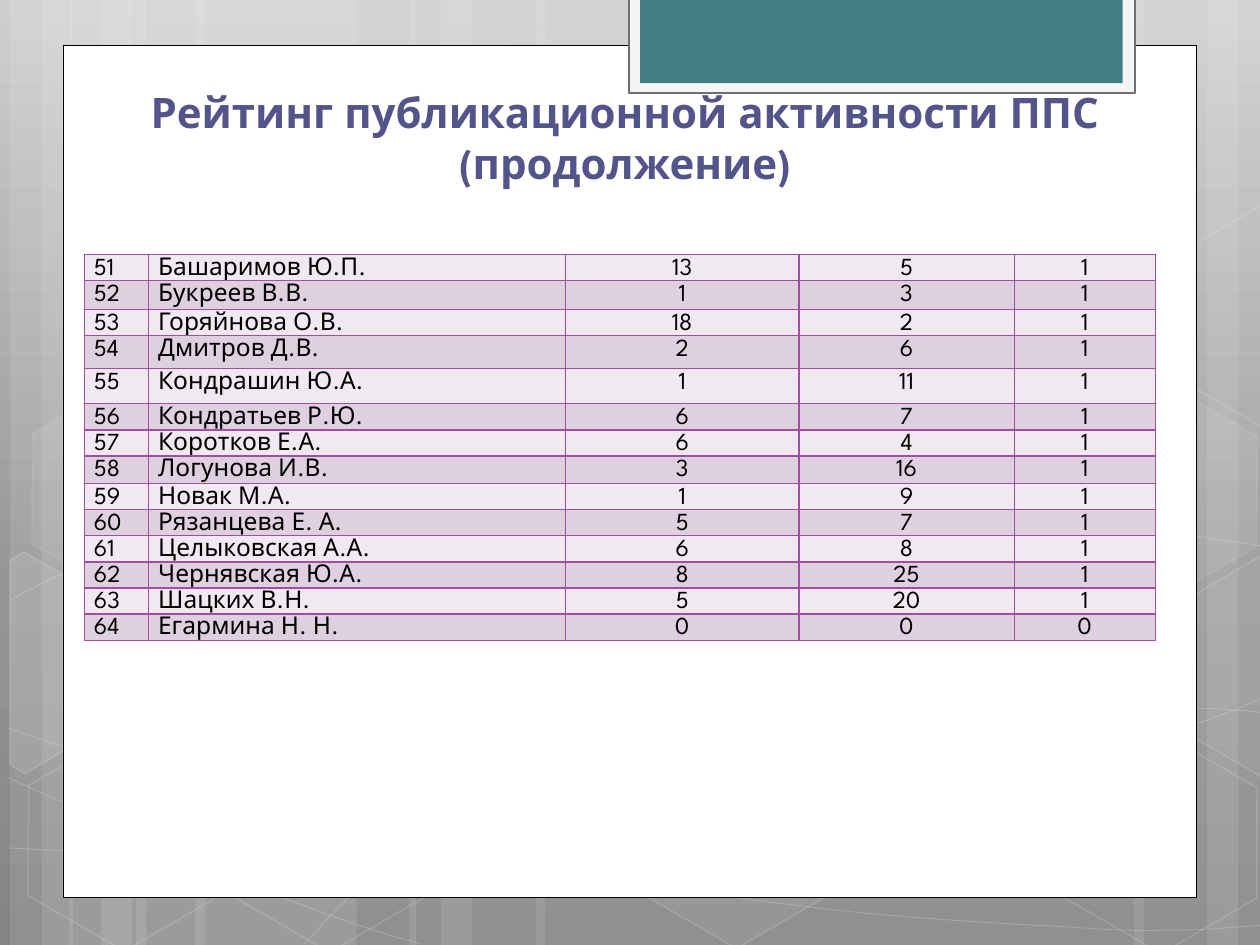
"""Build the staff publication rating slide with its continued table."""
from copy import deepcopy
from dataclasses import dataclass
from typing import Any, Optional

from lxml.etree import SubElement
from pptx import Presentation
from pptx.dml.color import RGBColor
from pptx.enum.shapes import MSO_SHAPE
from pptx.enum.text import MSO_ANCHOR, MSO_AUTO_SIZE, PP_ALIGN
from pptx.oxml.ns import qn
from pptx.util import Inches, Pt

WHITE = RGBColor(0xFF, 0xFF, 0xFF)
BLACK = RGBColor(0x00, 0x00, 0x00)
INDIGO = RGBColor(0x53, 0x54, 0x8A)
TEAL = RGBColor(0x43, 0x80, 0x86)
TAB_GREY = RGBColor(0xF5, 0xF5, 0xF5)
TAB_EDGE = RGBColor(0x6F, 0x6F, 0x6F)
PURPLE = RGBColor(0xA0, 0x4D, 0xA3)
ROW_COLORS = (RGBColor(0xF0, 0xE9, 0xF0), RGBColor(0xDF, 0xD0, 0xE0))
BACKDROP = ((0, RGBColor(0xCF, 0xCF, 0xCF)), (0.62, RGBColor(0x96, 0x96, 0x96)),
            (1, RGBColor(0x84, 0x84, 0x84)))
FONT = "League Spartan"
Point = tuple[float, float]


@dataclass(frozen=True)
class Paint:
    fill: Optional[RGBColor] = None
    fill_alpha: int = 100
    line: Optional[RGBColor] = None
    line_width: float = 1
    line_alpha: int = 100


@dataclass(frozen=True)
class Hexagon:
    left: float
    top: float
    fill_alpha: int
    line_alpha: int


@dataclass(frozen=True)
class Panel:
    left: float
    top: float
    width: float
    height: float
    paint: Paint


@dataclass(frozen=True)
class Rating:
    number: int
    person: str
    scores: tuple[int, int, int]
    height: float


BANDS = ((1.08, 1.75), (0.08, 0.5), (0.33, 0.83), (1.55, 1.75), (0.55, 0.5), (0.8, 0.83),
         (7.33, 1.75), (9.58, 0.5), (9, 0.83), (4.25, 3.08), (3.25, 0.5), (3.5, 0.83))
CURVES = (
    ((0.07, 6.73), (0.61, 6.76), (1.15, 6.79), (1.9, 6.78), (2.65, 6.77), (3.58, 6.75),
     (4.58, 6.65), (5.58, 6.55), (7, 6.36), (7.92, 6.17), (8.83, 5.98), (9.77, 5.68), (10.07, 5.51)),
    ((0.07, 4.77), (0.36, 4.61), (0.65, 4.46), (1.21, 4.31), (1.78, 4.16), (2.59, 3.94),
     (3.47, 3.87), (4.36, 3.8), (5.44, 3.79), (6.54, 3.87), (7.64, 3.95), (9.47, 4.26), (10.07, 4.34)),
    ((0.06, 6.17), (1.27, 6.72), (2.47, 7.27), (3.34, 7.49)),
    ((0.07, 5.78), (0.38, 5.89), (0.7, 6), (1.28, 6.16), (1.86, 6.31), (2.73, 6.56),
     (3.57, 6.73), (4.4, 6.9), (5.45, 7.08), (6.28, 7.18), (7.11, 7.29), (8, 7.33),
     (8.53, 7.36), (9.05, 7.4), (9.19, 7.38), (9.45, 7.38), (9.71, 7.37), (9.89, 7.35), (10.07, 7.34)),
    ((2.42, 7.49), (2.6, 7.29), (2.78, 7.09), (3.02, 6.91), (3.26, 6.73), (3.6, 6.53),
     (3.88, 6.39), (4.16, 6.25), (4.33, 6.19), (4.7, 6.09), (5.06, 5.99), (5.73, 5.85),
     (6.08, 5.78), (6.44, 5.71), (6.49, 5.71), (6.8, 5.69), (7.11, 5.66), (7.6, 5.63),
     (7.94, 5.62), (8.29, 5.61), (8.86, 5.62), (8.86, 5.62), (8.86, 5.62), (9.53, 5.62),
     (9.53, 5.62), (9.71, 5.63), (9.88, 5.64), (9.97, 5.65), (10.06, 5.66), (10.03, 5.65), (10.06, 5.66)),
)
HEXAGONS = (
    Hexagon(3.34, 0.36, 4, 8), Hexagon(4.97, 5.89, 6, 12), Hexagon(0.11, 5.91, 0, 12),
    Hexagon(0.14, 3.12, 7, 8), Hexagon(1.74, 5.92, 0, 12), Hexagon(7.53, 4.53, 10, 12),
    Hexagon(8.34, 5.93, 0, 12), Hexagon(8.34, 3.14, 7, 8),
)
CUT_HEXAGONS = (
    (((0.08, 4.45), (0.19, 4.38), (0.96, 4.82), (0.95, 5.7), (0.2, 6.14), (0.08, 6.07)), 10),
    (((9.26, 4.85), (10.01, 4.41), (10.09, 4.46), (10.09, 6.13), (10.02, 6.17), (9.26, 5.73)), 4),
    (((9.26, 2.07), (10.01, 1.63), (10.1, 1.68), (10.09, 3.35), (10.02, 3.39), (9.26, 2.95)), 0),
)
PANELS = (
    Panel(0.5, 0.36, 9, 6.76, Paint(WHITE, line=BLACK, line_width=0.5)),
    Panel(4.99, -0.02, 4.02, 0.76, Paint(TAB_GREY, line=TAB_EDGE, line_width=1.25)),
    Panel(5.08, -0.02, 3.83, 0.68, Paint(TEAL)),
)
COLUMN_WIDTHS = (0.51, 3.31, 1.85, 1.71, 1.12)
RATINGS = (
    Rating(51, "Башаримов Ю.П.", (13, 5, 1), 0.16),
    Rating(52, "Букреев В.В.", (1, 3, 1), 0.23),
    Rating(53, "Горяйнова О.В.", (18, 2, 1), 0.19),
    Rating(54, "Дмитров Д.В.", (2, 6, 1), 0.26),
    Rating(55, "Кондрашин Ю.А.", (1, 11, 1), 0.28),
    Rating(56, "Кондратьев Р.Ю.", (6, 7, 1), 0.19),
    Rating(57, "Коротков Е.А.", (6, 4, 1), 0.16),
    Rating(58, "Логунова И.В.", (3, 16, 1), 0.22),
    Rating(59, "Новак М.А.", (1, 9, 1), 0.19),
    Rating(60, "Рязанцева Е. А.", (5, 7, 1), 0.16),
    Rating(61, "Целыковская А.А.", (6, 8, 1), 0.12),
    Rating(62, "Чернявская Ю.А.", (8, 25, 1), 0.19),
    Rating(63, "Шацких В.Н.", (5, 20, 1), 0.15),
    Rating(64, "Егармина Н. Н.", (0, 0, 0), 0.21),
)
TITLE_FRAME = {"left": Inches(0.59), "top": Inches(0.67), "width": Inches(8.74), "height": Inches(0.87)}
TITLE_TEXT = {"word_wrap": True, "auto_size": MSO_AUTO_SIZE.NONE, "vertical_anchor": MSO_ANCHOR.BOTTOM}
TITLE_FONT = {"name": FONT, "size": Pt(24), "bold": True}
CELL_FONT = {"name": FONT, "size": Pt(14), "bold": False}
CELL_MARGINS = {"margin_left": Pt(5.4), "margin_right": Pt(5.4), "margin_top": 0, "margin_bottom": 0}
TABLE_FLAGS = {"first_row": False, "horz_banding": False}


def apply_format(target: Any, values: dict[str, Any]) -> None:
    for name, value in values.items():
        setattr(target, name, value)


def set_alpha(holder: Any, percent: int) -> None:
    if percent < 100:
        color = holder.find(f"{qn('a:solidFill')}/{qn('a:srgbClr')}")
        SubElement(color, qn("a:alpha"), val=str(percent * 1000))


def paint_shape(shape: Any, paint: Paint) -> None:
    shape.shadow.inherit = False
    properties = shape._element.spPr
    if paint.fill is None or paint.fill_alpha == 0:
        shape.fill.background()
    else:
        shape.fill.solid()
        shape.fill.fore_color.rgb = paint.fill
        set_alpha(properties, paint.fill_alpha)
    if paint.line is None:
        shape.line.fill.background()
    else:
        shape.line.color.rgb = paint.line
        shape.line.width = Pt(paint.line_width)
        set_alpha(properties.find(qn("a:ln")), paint.line_alpha)


def draw_panel(slide: Any, panel: Panel) -> None:
    bounds = (Inches(v) for v in (panel.left, panel.top, panel.width, panel.height))
    paint_shape(slide.shapes.add_shape(MSO_SHAPE.RECTANGLE, *bounds), panel.paint)


def draw_hexagon(slide: Any, hexagon: Hexagon) -> None:
    shape = slide.shapes.add_shape(MSO_SHAPE.HEXAGON, Inches(hexagon.left), Inches(hexagon.top),
                                   Inches(1.75), Inches(1.52))
    shape.rotation = 30
    shape.adjustments[0], shape.adjustments[1] = 0.285, 1.155
    paint_shape(shape, Paint(WHITE, hexagon.fill_alpha, WHITE, 1, hexagon.line_alpha))


def draw_outline(slide: Any, points: tuple[Point, ...], closed: bool, paint: Paint) -> Any:
    corners = [(Inches(x), Inches(y)) for x, y in points]
    builder = slide.shapes.build_freeform(*corners[0])
    builder.add_line_segments(corners[1:], close=closed)
    outline = builder.convert_to_shape()
    paint_shape(outline, paint)
    return outline


def draw_curve(slide: Any, controls: tuple[Point, ...]) -> None:
    outline = draw_outline(slide, controls, False, Paint(line=WHITE, line_width=0.5, line_alpha=20))
    segments = list(outline._element.iter(qn("a:lnTo")))
    for start in range(0, len(segments), 3):
        bend = segments[start].getparent().makeelement(qn("a:cubicBezTo"))
        segments[start].addprevious(bend)
        for segment in segments[start:start + 3]:
            bend.append(segment[0])
            segment.getparent().remove(segment)


def draw_backdrop(slide: Any) -> None:
    fill = slide.background.fill
    fill.gradient()
    fill.gradient_angle = 270
    last_stop = fill.gradient_stops[-1]._gs
    last_stop.addprevious(deepcopy(last_stop))
    for stop, (position, color) in zip(fill.gradient_stops, BACKDROP):
        stop.position, stop.color.rgb = position, color
    for left, width in BANDS:
        draw_panel(slide, Panel(left, 0, width, 7.5, Paint(WHITE, 10)))
    for controls in CURVES:
        draw_curve(slide, controls)
    for hexagon in HEXAGONS:
        draw_hexagon(slide, hexagon)
    for corners, alpha in CUT_HEXAGONS:
        draw_outline(slide, corners, True, Paint(WHITE, alpha, WHITE, 1, 12))
    for panel in PANELS:
        draw_panel(slide, panel)


def move_backdrop_to_layout(slide: Any) -> None:
    layout = slide.slide_layout
    for placeholder in list(layout.placeholders)[1:]:
        layout.shapes._spTree.remove(placeholder._element)
    for shape in list(slide.shapes):
        if not shape.is_placeholder:
            layout.shapes._spTree.append(shape._element)


def write_title(slide: Any) -> None:
    title = slide.shapes.title
    apply_format(title, TITLE_FRAME)
    apply_format(title.text_frame, TITLE_TEXT)
    title.text_frame.text = "Рейтинг публикационной активности ППС (продолжение)"
    heading = title.text_frame.paragraphs[0]
    heading.alignment = PP_ALIGN.CENTER
    apply_format(heading.runs[0].font, TITLE_FONT)
    heading.runs[0].font.color.rgb = INDIGO


def write_cell(cell: Any, text: str, alignment: PP_ALIGN, color: RGBColor) -> None:
    apply_format(cell, CELL_MARGINS)
    cell.text = text
    entry = cell.text_frame.paragraphs[0]
    apply_format(entry, {"alignment": alignment, "line_spacing": 1.15})
    apply_format(entry.runs[0].font, CELL_FONT)
    entry.runs[0].font.color.rgb = BLACK
    properties = cell._tc.get_or_add_tcPr()
    for side in ("lnL", "lnR", "lnT", "lnB"):
        border = SubElement(properties, qn(f"a:{side}"), w=str(Pt(1)))
        SubElement(SubElement(border, qn("a:solidFill")), qn("a:srgbClr"), val=str(PURPLE))
    cell.fill.solid()
    cell.fill.fore_color.rgb = color


def draw_ratings(slide: Any) -> None:
    frame = slide.shapes.add_table(len(RATINGS), len(COLUMN_WIDTHS), Inches(0.67), Inches(2.02),
                                   Inches(8.5), Inches(3.77))
    table = frame.table
    apply_format(table, TABLE_FLAGS)
    for column, width in zip(table.columns, COLUMN_WIDTHS):
        column.width = Inches(width)
    for index, rating in enumerate(RATINGS):
        table.rows[index].height = Inches(rating.height)
        for position, value in enumerate((rating.number, rating.person, *rating.scores)):
            alignment = PP_ALIGN.LEFT if position < 2 else PP_ALIGN.CENTER
            write_cell(table.cell(index, position), str(value), alignment, ROW_COLORS[index % 2])
    frame.height = Inches(3.77)


def main() -> None:
    deck = Presentation()
    deck.slide_width, deck.slide_height = Inches(10), Inches(7.5)
    slide = deck.slides.add_slide(deck.slide_layouts[5])
    draw_backdrop(slide)
    move_backdrop_to_layout(slide)
    write_title(slide)
    draw_ratings(slide)
    deck.save("out.pptx")


if __name__ == "__main__":
    main()
